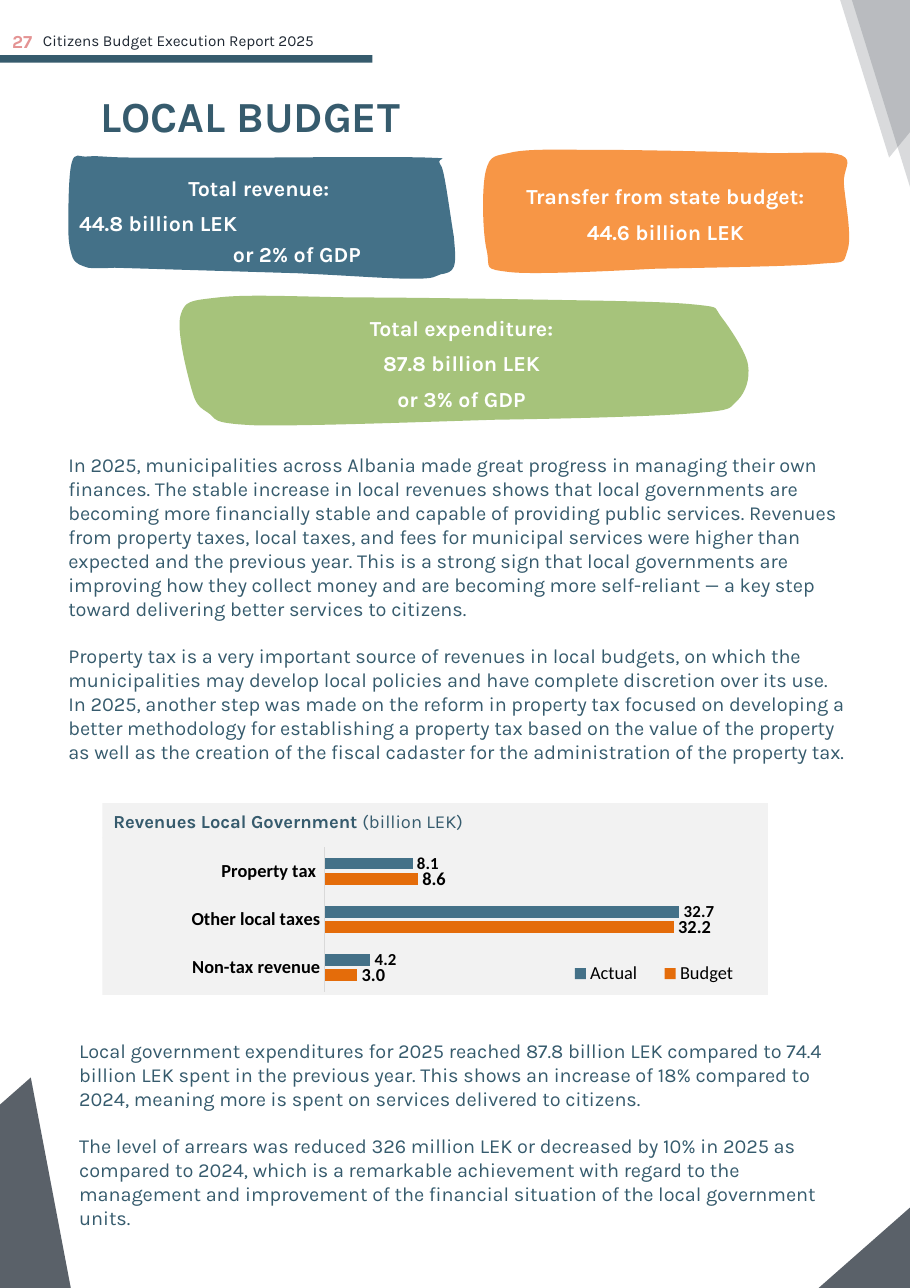
from pptx import Presentation
from pptx.chart.data import CategoryChartData
from pptx.dml.color import RGBColor
from pptx.enum.chart import XL_CHART_TYPE, XL_LABEL_POSITION, XL_LEGEND_POSITION, XL_TICK_LABEL_POSITION, XL_TICK_MARK
from pptx.enum.shapes import MSO_SHAPE
from pptx.enum.text import MSO_ANCHOR, MSO_AUTO_SIZE, PP_ALIGN
from pptx.oxml.xmlchemy import OxmlElement
from pptx.util import Inches, Pt

RECT = MSO_SHAPE.RECTANGLE
BAR = XL_CHART_TYPE.BAR_CLUSTERED
OUT_END = XL_LABEL_POSITION.OUTSIDE_END
BOTTOM = XL_LEGEND_POSITION.BOTTOM
NEXT_TO, NO_TICK = XL_TICK_LABEL_POSITION.NEXT_TO_AXIS, XL_TICK_MARK.NONE
TOP, MIDDLE = MSO_ANCHOR.TOP, MSO_ANCHOR.MIDDLE
LEFT, CENTER = PP_ALIGN.LEFT, PP_ALIGN.CENTER

# Content
TITLE = "LOCAL BUDGET"
HEADER = "Citizens Budget Execution Report 2025"
PAGE = "27"
REVENUE_TEXT = [
    "In 2025, municipalities across Albania made great progress in managing their own finances. The stable increase in local revenues shows that local governments are becoming more financially stable and capable of providing public services. Revenues from property taxes, local taxes, and fees for municipal services were higher than expected and the previous year. This is a strong sign that local governments are improving how they collect money and are becoming more self-reliant — a key step toward delivering better services to citizens.",
    "Property tax is a very important source of revenues in local budgets, on which the municipalities may develop local policies and have complete discretion over its use.",
    "In 2025, another step was made on the reform in property tax focused on developing a better methodology for establishing a property tax based on the value of the property as well as the creation of the fiscal cadaster for the administration of the property tax.",
]
SPENDING_TEXT = [
    "Local government expenditures for 2025 reached 87.8 billion LEK compared to 74.4 billion LEK spent in the previous year. This shows an increase of 18% compared to 2024, meaning more is spent on services delivered to citizens.",
    "The level of arrears was reduced 326 million LEK or decreased by 10% in 2025 as compared to 2024, which is a remarkable achievement with regard to the management and improvement of the financial situation of the local government units.",
]
CHART_TITLE = [("Revenues Local Government ", True), ("(billion LEK)", False)]
CATEGORIES = ["Non-tax revenue", "Other local taxes", "Property tax "]
SERIES = [("Budget", (3, 32.2, 8.6), "budget", 12),
          ("Actual", (4.2, 32.7, 8.1), "actual", 11)]
REVENUE = ["Total revenue: ", "44.8 billion LEK", "or 2% of GDP"]
TRANSFER = ["Transfer from state budget:", "44.6 billion LEK"]
EXPENDITURE = ["Total expenditure: ", "87.8 billion LEK ", "or 3% of GDP "]

# Theme
THEME = dict(font="Karla", chart_font="Calibri", ink="365B6D", dark="1E2732",
             page="E49393", white="FFFFFF", black="000000", panel="F2F2F2",
             axis="D9D9D9", actual="447188", budget="E46C0A",
             transfer="F79646", spending="A6C37B",
             title=28, label=14, body=13, small=12, header=10)

# Grid in inches: page margin, text column, chart panel
W, H = 8.26, 11.69
MARGIN, COLUMN = 0.62, 7.09
PANEL_X, PANEL_W = 0.93, 6.04
PANEL_Y, PANEL_HEAD, PANEL_H = 7.29, 0.31, 1.74

# Corner triangles: points, opacity in percent
CORNERS = [
    ([(8.32, 1.89), (7.59, -0.46), (9.89, -0.01)], 17),
    ([(9.34, 10.01), (9.94, 13.17), (6.92, 12.14)], 73),
    ([(8.07, 1.43), (7.34, -0.92), (9.63, -0.47)], 17),
    ([(0.28, 9.78), (0.88, 12.94), (-2.14, 11.91)], 73),
]

# Brush labels: frame, then start point, lines (2 numbers) and curves (6 numbers)
REVENUE_FRAME = (0.62, 1.42, 3.51, 1.12)
REVENUE_EDGE = [
    (0.65, 1.48), (0.62, 1.59, 0.62, 1.93, 0.62, 2.07),
    (0.62, 2.22, 0.64, 2.28, 0.66, 2.34), (0.69, 2.4, 0.74, 2.41, 0.8, 2.43),
    (0.86, 2.44, 1.04, 2.43, 1.04, 2.43), (2.7, 2.48),
    (3.15, 2.5, 3.53, 2.53, 3.74, 2.53), (3.96, 2.53, 3.94, 2.51, 4, 2.49),
    (4.06, 2.48, 4.1, 2.47, 4.12, 2.42), (4.14, 2.36, 4.13, 2.27, 4.12, 2.15),
    (4.1, 2.03, 4.07, 1.82, 4.05, 1.7), (4.03, 1.59, 4.02, 1.52, 3.99, 1.48),
    (3.96, 1.43, 4.13, 1.44, 3.87, 1.43), (3.61, 1.42, 2.44, 1.43, 2.44, 1.43),
    (1.23, 1.43), (0.95, 1.43, 0.9, 1.41, 0.8, 1.42),
    (0.71, 1.43, 0.68, 1.37, 0.65, 1.48)]
TRANSFER_FRAME = (4.38, 1.36, 3.32, 1.12)
TRANSFER_EDGE = [
    (4.41, 1.55), (4.37, 1.7, 4.38, 2.13, 4.42, 2.28),
    (4.45, 2.44, 4.38, 2.44, 4.63, 2.47), (4.88, 2.5, 5.92, 2.44, 5.92, 2.44),
    (6.38, 2.43, 7.09, 2.42, 7.38, 2.4), (7.68, 2.37, 7.65, 2.41, 7.69, 2.28),
    (7.74, 2.16, 7.67, 1.82, 7.66, 1.67), (7.65, 1.53, 7.75, 1.46, 7.64, 1.41),
    (7.53, 1.37, 7.37, 1.39, 7, 1.39), (6.63, 1.38, 5.82, 1.36, 5.43, 1.36),
    (5.04, 1.36, 4.83, 1.35, 4.66, 1.38), (4.49, 1.42, 4.45, 1.4, 4.41, 1.55)]
SPENDING_FRAME = (1.63, 2.69, 5.17, 1.17)
SPENDING_EDGE = [
    (1.64, 2.86), (1.6, 2.99, 1.69, 3.35, 1.73, 3.5),
    (1.77, 3.64, 1.78, 3.68, 1.88, 3.74), (1.98, 3.8, 1.88, 3.84, 2.31, 3.86),
    (2.75, 3.87, 3.83, 3.83, 4.5, 3.81), (5.16, 3.8, 5.94, 3.78, 6.31, 3.75),
    (6.67, 3.72, 6.61, 3.71, 6.69, 3.64), (6.77, 3.56, 6.81, 3.44, 6.79, 3.31),
    (6.77, 3.19, 6.62, 2.97, 6.55, 2.88), (6.48, 2.79, 6.54, 2.79, 6.36, 2.77),
    (6.18, 2.75, 6, 2.74, 5.47, 2.73), (4.95, 2.72, 3.79, 2.7, 3.21, 2.7),
    (2.63, 2.69, 2.24, 2.67, 1.98, 2.7), (1.72, 2.73, 1.68, 2.73, 1.64, 2.86)]


def rgb(name):
    return RGBColor.from_string(THEME[name])


def write(tf, lines, size="body", color="ink", bold=False, align=LEFT,
          spacing=None, gaps=(), after=0, inset=None, anchor=TOP):
    """Fill a text frame; each line is text or a list of (text, bold) runs."""
    tf.word_wrap, tf.auto_size, tf.vertical_anchor = True, MSO_AUTO_SIZE.NONE, anchor
    if inset is not None:
        tf.margin_left = tf.margin_right = tf.margin_top = tf.margin_bottom = inset
    for i, line in enumerate(lines):
        p = tf.add_paragraph() if i else tf.paragraphs[0]
        p.alignment, p.line_spacing = align, spacing
        p.space_before = Pt(gaps[i] if i < len(gaps) else 0)
        p.space_after = Pt(after)
        for text, weight in [(line, bold)] if isinstance(line, str) else line:
            r = p.add_run()
            r.text, r.font.bold = text, weight
            r.font.name, r.font.size = THEME["font"], Pt(THEME[size])
            r.font.color.rgb = rgb(color)
    return tf


def text_box(s, x, y, w, h, lines, **fmt):
    box = s.shapes.add_textbox(Inches(x), Inches(y), Inches(w), Inches(h))
    write(box.text_frame, lines, **fmt)


def paint(sp, color):
    sp.shadow.inherit = False
    sp.fill.solid()
    sp.fill.fore_color.rgb = rgb(color)
    sp.line.fill.background()
    return sp


def element(parent, tag, index=None, **attrs):
    el = OxmlElement(tag)
    for key, value in attrs.items():
        el.set(key, str(value))
    parent.insert(len(parent) if index is None else index, el)
    return el


def outline(s, points, color):
    pts = [(Inches(x), Inches(y)) for x, y in points]
    builder = s.shapes.build_freeform(*pts[0], scale=1.0)
    builder.add_line_segments(pts[1:], close=True)
    return paint(builder.convert_to_shape(), color)


def brush_label(s, frame, edge, color, lines, **fmt):
    """Build the outline through its end points, then bend it into curves."""
    sp = outline(s, [seg[-2:] for seg in edge], color)
    sp.left, sp.top, sp.width, sp.height = map(Inches, frame)
    outline_path = sp._element.spPr.find(".//{*}pathLst")[0]
    outline_path.set("w", str(sp.width))
    outline_path.set("h", str(sp.height))
    for old in list(outline_path):
        outline_path.remove(old)
    for i, seg in enumerate(edge):
        tag = "a:cubicBezTo" if len(seg) == 6 else "a:lnTo" if i else "a:moveTo"
        step = element(outline_path, tag)
        for x, y in zip(seg[::2], seg[1::2]):
            element(step, "a:pt", x=Inches(x) - sp.left, y=Inches(y) - sp.top)
    element(outline_path, "a:close")
    return write(sp.text_frame, lines, size="label", color="white", bold=True,
                 align=CENTER, spacing=1.2, anchor=MIDDLE, **fmt)


def place(parent, index, x, y, w, h, inner=False):
    """Fix the place of a chart part, in percent of the chart."""
    for old in parent.findall("{*}layout"):
        parent.remove(old)
    manual = element(element(parent, "c:layout", index), "c:manualLayout")
    if inner:
        element(manual, "c:layoutTarget", val="inner")
    for tag in ("c:xMode", "c:yMode"):
        element(manual, tag, val="edge")
    for tag, value in zip("xywh", (x, y, w, h)):
        element(manual, "c:" + tag, val=value / 100)


def chart_font(font, size, bold=False):
    font.name, font.size, font.bold = THEME["chart_font"], Pt(size), bold
    font.color.rgb = rgb("black")


def revenue_chart(s):
    data = CategoryChartData(number_format="#,##0.0")
    data.categories = CATEGORIES
    for name, values, _, _ in SERIES:
        data.add_series(name, values)
    chart = s.shapes.add_chart(BAR, Inches(PANEL_X), Inches(PANEL_Y + PANEL_HEAD), Inches(PANEL_W),
                               Inches(PANEL_H - PANEL_HEAD), data).chart
    chart.has_title = False
    chart_font(chart.font, THEME["label"])
    plot = chart.plots[0]
    plot.gap_width, plot.overlap, plot.vary_by_categories = 182, -30, False
    for series, (_, _, color, size) in zip(plot.series, SERIES):
        series.format.fill.solid()
        series.format.fill.fore_color.rgb = rgb(color)
        labels = series.data_labels
        labels.show_value, labels.position = True, OUT_END
        labels.number_format, labels.number_format_is_linked = "#,##0.0", False
        chart_font(labels.font, size, True)
    cat, val = chart.category_axis, chart.value_axis
    cat.major_tick_mark = cat.minor_tick_mark = NO_TICK
    cat.tick_label_position = NEXT_TO
    cat.format.line.color.rgb, cat.format.line.width = rgb("axis"), Pt(0.75)
    chart_font(cat.tick_labels.font, THEME["small"], True)
    val.minimum_scale, val.maximum_scale, val.major_unit = 0, 40, 10
    val.has_major_gridlines = val.visible = False
    chart.has_legend = True
    legend = chart.legend
    legend.position, legend.include_in_layout = BOTTOM, False
    chart_font(legend.font, THEME["small"])
    place(legend._element, 1, 67.8, 77, 30.2, 19)
    root = chart._chartSpace
    place(root.chart.plotArea, 0, 33.4, 6.2, 65.2, 91.9, inner=True)
    # Panel colour behind the chart
    sp_pr = element(root, "c:spPr", root.index(root.chart) + 1)
    element(element(sp_pr, "a:solidFill"), "a:srgbClr", val=THEME["panel"])
    element(element(sp_pr, "a:ln"), "a:noFill")


def main():
    prs = Presentation()
    prs.slide_width, prs.slide_height = Inches(W), Inches(H)
    s = prs.slides.add_slide(prs.slide_layouts[5])
    # Corners
    for points, opacity in CORNERS:
        sp = outline(s, points, "dark")
        element(sp.fill._xPr.solidFill[0], "a:alpha", val=opacity * 1000)
    # Title
    title = s.shapes.title
    title.left, title.top, title.width, title.height = map(Inches, (0.91, 0.74, 6.6, 0.49))
    write(title.text_frame, [TITLE], size="title", bold=True, spacing=Pt(39.2), inset=0)
    # Budget labels
    tf = brush_label(s, REVENUE_FRAME, REVENUE_EDGE, "actual", REVENUE, gaps=(0, 3))
    tf.paragraphs[1].alignment = LEFT
    tf.paragraphs[2]._p.get_or_add_pPr().set("marL", str(Inches(0.64)))
    brush_label(s, TRANSFER_FRAME, TRANSFER_EDGE, "transfer", TRANSFER, gaps=(0, 3))
    brush_label(s, SPENDING_FRAME, SPENDING_EDGE, "spending", EXPENDITURE, after=3)
    # Running text
    text_box(s, MARGIN, 4.11, COLUMN, 2.84, REVENUE_TEXT, gaps=(0, 15.4), inset=0)
    text_box(s, MARGIN, 9.38, COLUMN, 1.77, SPENDING_TEXT, gaps=(0, 15.2))
    # Chart panel
    revenue_chart(s)
    head = s.shapes.add_shape(RECT, Inches(PANEL_X), Inches(PANEL_Y), Inches(PANEL_W), Inches(PANEL_HEAD + 0.01))
    write(paint(head, "panel").text_frame, [CHART_TITLE], size="small", anchor=MIDDLE)
    # Page header
    paint(s.shapes.add_shape(RECT, 0, Inches(0.5), Inches(3.38), Inches(0.07)), "ink")
    text_box(s, 0.39, 0.26, 3.03, 0.18, [HEADER], size="header", color="dark", spacing=Pt(14), inset=0)
    text_box(s, 0.11, 0.24, 0.21, 0.21, [PAGE], size="small", color="page", bold=True, spacing=Pt(16.8), inset=0)
    prs.save("out.pptx")


if __name__ == "__main__":
    main()
